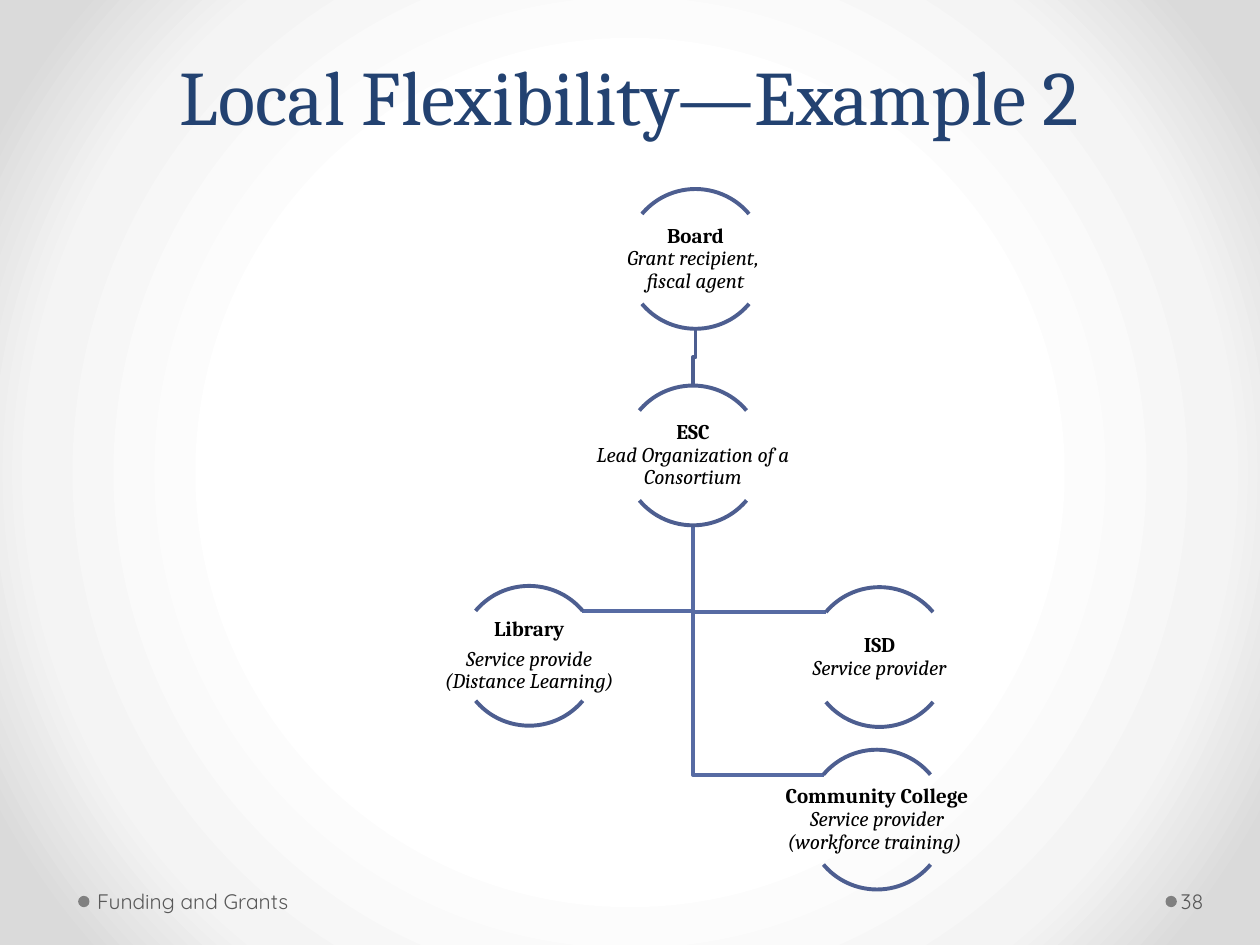
from dataclasses import dataclass

from pptx import Presentation
from pptx.dml.color import RGBColor
from pptx.enum.shapes import MSO_SHAPE
from pptx.enum.text import MSO_ANCHOR, PP_ALIGN
from pptx.oxml import parse_xml
from pptx.util import Inches, Pt

ARC, DOT = MSO_SHAPE.ARC, MSO_SHAPE.OVAL
MID, LOW = MSO_ANCHOR.MIDDLE, MSO_ANCHOR.BOTTOM
CENTER, LEFT = PP_ALIGN.CENTER, PP_ALIGN.LEFT


@dataclass(frozen=True)
class Theme:
    serif: str = "Cambria"
    sans: str = "Quicksand"
    title: str = "234271"
    ink: str = "000000"
    foot: str = "595959"
    dot: str = "808080"
    arc: str = "4D5E90"
    branch: str = "576BA3"
    big: int = 44
    small: int = 12
    stroke: float = 2.25
    glow: tuple = ((50, "FFFFFF"), (76, "F4F4F4"), (92, "DADADA"))


T = Theme()
TITLE = "Local Flexibility—Example 2"

# Name: centre x, top y, paragraphs of (text, is heading) runs; \v breaks a line
NODES = {
    "board": (5.52, 1.5, [[("Board\v", True), ("Grant recipient, \vfiscal agent", False)]]),
    "esc": (5.5, 3.06, [[("ESC\v", True), ("Lead Organization of a Consortium", False)]]),
    "college": (6.96, 5.95, [[("Community College\v", True),
                              ("Service provider\v(workforce training) ", False)]]),
    "isd": (6.98, 4.66, [[("ISD\v", True), ("Service provider", False)]]),
    "library": (4.2, 4.65, [[("Library", True)],
                            [("Service provide\v(Distance Learning)", False)]]),
}
BRANCHES = [("esc", "library"), ("esc", "isd"), ("esc", "college")]
STEM = ("board", "esc")

# Dot left, text left, text width, left inset, text
FOOTER = [(9.25, 9.34, 0.61, 0.03, "38"),
          (0.62, 0.72, 3.11, 0.05, "Funding and Grants")]

RING = 1.11          # diameter of a node's circle
INSET = 0.2          # from circle top to label, and to the arc's ends
REACH = 0.42         # from circle centre to the arc's ends
ARCS = [(132, 192), (24, 84)]

prs = Presentation()
prs.slide_width, prs.slide_height = Inches(10), Inches(7.5)
slide = prs.slides.add_slide(prs.slide_layouts[5])
shapes = slide.shapes


def paint():
    """Fill the background with a radial gradient."""
    fill = slide.background.fill
    fill.solid()
    fill.fore_color.rgb = RGBColor.from_string(T.glow[0][1])
    stops = "".join(f'<a:gs pos="{at * 1000}"><a:srgbClr val="{color}"/></a:gs>'
                    for at, color in T.glow)
    grad = parse_xml(
        '<a:gradFill xmlns:a="http://schemas.openxmlformats.org/drawingml/2006/main"'
        f' rotWithShape="1"><a:gsLst>{stops}</a:gsLst><a:path path="circle">'
        '<a:fillToRect l="50000" t="50000" r="50000" b="50000"/></a:path></a:gradFill>')
    solid = slide.background._cSld.bg.bgPr[0]
    solid.getparent().replace(solid, grad)


def style(run, font, size, color, bold=False, italic=False):
    face = run.font
    face.name, face.size, face.bold, face.italic = font, Pt(size), bold, italic
    face.color.rgb = RGBColor.from_string(color)


def box(x, y, w, h, pads):
    frame = shapes.add_textbox(*map(Inches, (x, y, w, h))).text_frame
    frame.word_wrap, frame.vertical_anchor = True, MID
    (frame.margin_left, frame.margin_top,
     frame.margin_right, frame.margin_bottom) = map(Inches, pads)
    return frame


def outline(shape, color):
    shape.shadow.inherit = False
    shape.fill.background()
    shape.line.width = Pt(T.stroke)
    shape.line.color.rgb = RGBColor.from_string(color)


def trace(points, color):
    """Draw an open line through the points."""
    first, *rest = [(Inches(x), Inches(y)) for x, y in points]
    pen = shapes.build_freeform(*first)
    pen.add_line_segments(rest, close=False)
    outline(pen.convert_to_shape(), color)


def branch(parent, child):
    (px, py, _), (cx, cy, _) = NODES[parent], NODES[child]
    side = REACH if cx < px else -REACH
    bend = cy + INSET
    trace([(px, py + RING), (px, bend), (cx + side, bend)], T.branch)


def stem(parent, child):
    (px, py, _), (cx, cy, _) = NODES[parent], NODES[child]
    base = py + RING
    half = (base + cy) / 2
    trace([(px, base), (px, half), (cx, half), (cx, cy)], T.arc)


def node(x, y, paras):
    for ends in ARCS:
        arc = shapes.add_shape(ARC, *map(Inches, (x - RING / 2, y, RING, RING)))
        arc.adjustments[0], arc.adjustments[1] = ends
        outline(arc, T.arc)
    frame = box(x - RING, y + INSET, 2 * RING, RING - 2 * INSET, [0.01] * 4)
    for i, parts in enumerate(paras):
        para = frame.add_paragraph() if i else frame.paragraphs[0]
        para.alignment, para.line_spacing = CENTER, 0.9
        para.space_after = Pt(0.35 * T.small)
        para.text = "".join(text for text, _ in parts)
        heads = [head for _, head in parts]
        for j, run in enumerate(para.runs):
            head = heads[min(j, len(heads) - 1)]
            style(run, T.serif, T.small, T.ink, bold=head, italic=not head)


def footer(dot_x, x, w, pad, text):
    dot = shapes.add_shape(DOT, *map(Inches, (dot_x, 7.11, 0.09, 0.09)))
    dot.shadow.inherit = False
    dot.fill.solid()
    dot.fill.fore_color.rgb = RGBColor.from_string(T.dot)
    dot.line.fill.background()
    frame = box(x, 6.95, w, 0.4, (pad, 0.05, 0.05, 0.05))
    frame.text = text
    frame.paragraphs[0].alignment = LEFT
    style(frame.paragraphs[0].runs[0], T.sans, T.small, T.foot)


def title():
    head = shapes.title
    head.left, head.top, head.width, head.height = map(Inches, (0.5, 0, 9, 1.17))
    head.text_frame.text = TITLE
    head.text_frame.vertical_anchor = LOW
    para = head.text_frame.paragraphs[0]
    para.alignment, para.line_spacing = CENTER, Pt(58)
    style(para.runs[0], T.serif, T.big, T.title)


paint()
title()
for item in FOOTER:
    footer(*item)
for pair in BRANCHES:
    branch(*pair)
stem(*STEM)
for item in NODES.values():
    node(*item)
prs.save("out.pptx")
